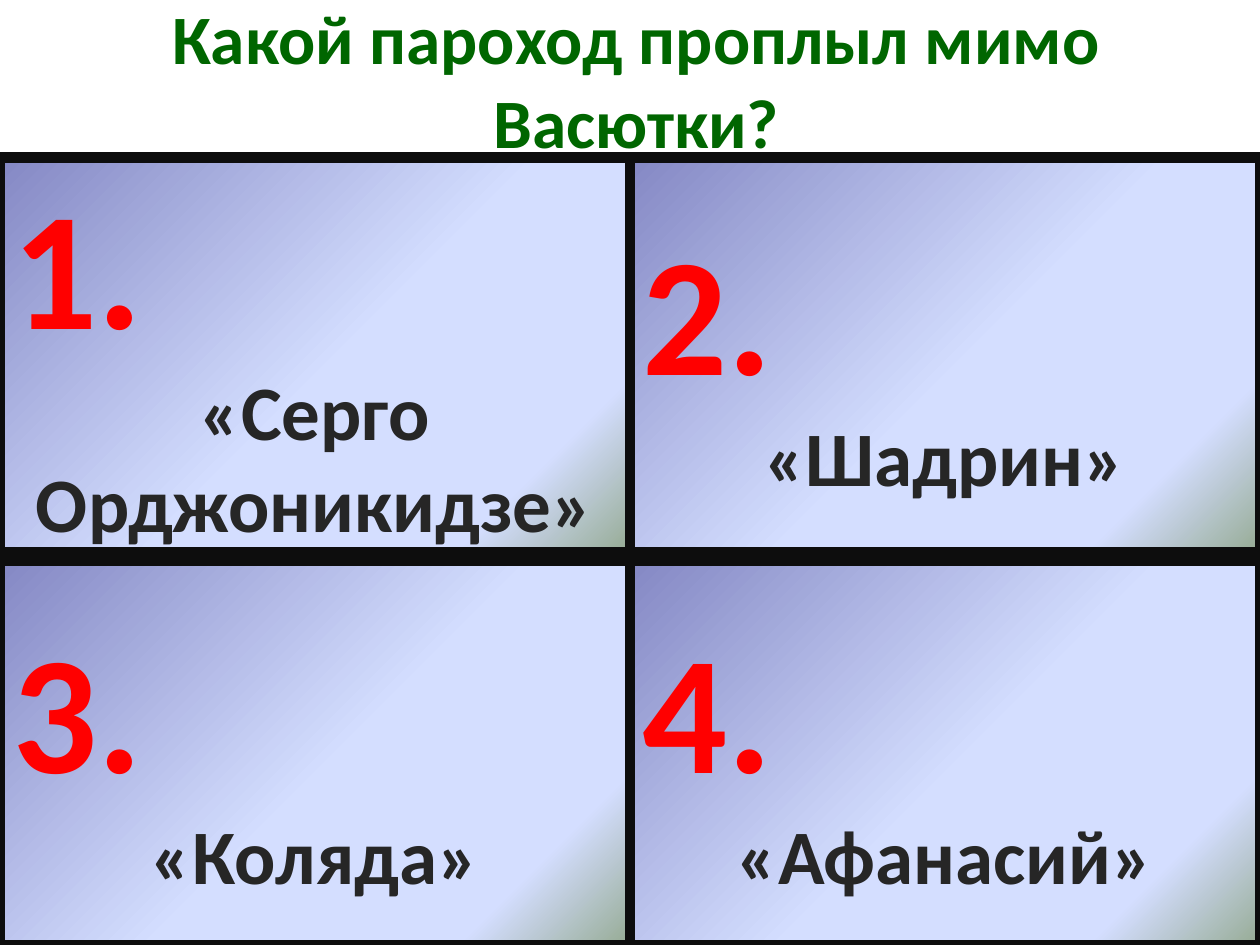
import copy

import pptx
import pptx.dml.color
import pptx.enum.shapes
import pptx.enum.text
import pptx.oxml.ns
import pptx.util
from pptx.util import Inches

RGBColor = pptx.dml.color.RGBColor
PP_ALIGN = pptx.enum.text.PP_ALIGN

GREEN = RGBColor(0x00, 0x66, 0x00)
RED = RGBColor(0xFF, 0x00, 0x00)
DARK_GREY = RGBColor(0x26, 0x26, 0x26)
BLACK = RGBColor(0x0D, 0x0D, 0x0D)
PALE_BLUE = RGBColor(0xD4, 0xDE, 0xFF)
GRADIENT = [
    (0, RGBColor(0x84, 0x88, 0xC4)),
    (0.53, PALE_BLUE),
    (0.83, PALE_BLUE),
    (1, RGBColor(0x96, 0xAB, 0x94)),
]

FONT = "Calibri"
QUESTION = "Какой пароход проплыл мимо Васютки?"
ANSWERS = ["«Серго Орджоникидзе»", "«Шадрин»", "«Коляда»", "«Афанасий»"]


def add_run(paragraph, text, size, color, alignment):
    paragraph.alignment = alignment
    run = paragraph.add_run()
    run.text = text
    run.font.name = FONT
    run.font.size = pptx.util.Pt(size)
    run.font.bold = True
    run.font.color.rgb = color


def prepare_frame(shape):
    frame = shape.text_frame
    frame.word_wrap = True
    frame.auto_size = pptx.enum.text.MSO_AUTO_SIZE.NONE
    frame.vertical_anchor = pptx.enum.text.MSO_ANCHOR.MIDDLE
    return frame


def place_title(slide, left, top, width, height):
    title = slide.shapes.title
    title.left, title.top, title.width, title.height = left, top, width, height
    frame = prepare_frame(title)
    add_run(frame.paragraphs[0], QUESTION, 39.6, GREEN, PP_ALIGN.CENTER)


def fill_with_gradient(shape):
    shape.fill.gradient()
    shape.fill.gradient_angle = 315  # counter-clockwise: top left to bottom right
    stop_list = shape.element.find(".//" + pptx.oxml.ns.qn("a:gsLst"))
    while len(stop_list) < len(GRADIENT):
        stop_list.append(copy.deepcopy(stop_list[0]))
    for stop, (position, color) in zip(shape.fill.gradient_stops, GRADIENT):
        stop.position = position
        stop.color.rgb = color


def add_answer(slide, number, answer, left, top, width, height):
    card = slide.shapes.add_shape(
        pptx.enum.shapes.MSO_SHAPE.RECTANGLE, left, top, width, height
    )
    card.shadow.inherit = False
    fill_with_gradient(card)
    card.line.color.rgb = BLACK
    card.line.width = pptx.util.Pt(6)
    frame = prepare_frame(card)
    add_run(frame.paragraphs[0], f"{number}.", 96, RED, PP_ALIGN.LEFT)
    add_run(frame.add_paragraph(), answer, 44, DARK_GREY, PP_ALIGN.CENTER)


def add_answer_grid(slide, left, top, width, row_heights, gap):
    """Place the answers in two columns, row by row."""
    column_width = width // 2
    for row, height in enumerate(row_heights):
        for column in range(2):
            index = row * 2 + column
            add_answer(slide, index + 1, ANSWERS[index],
                       left + column * column_width, top, column_width, height)
        top += height + gap


def main():
    presentation = pptx.Presentation()
    presentation.slide_width = Inches(10)
    presentation.slide_height = Inches(7.5)
    slide = presentation.slides.add_slide(presentation.slide_layouts[5])
    place_title(slide, Inches(0.55), Inches(0), Inches(9), Inches(1.25))
    add_answer_grid(slide, Inches(0), Inches(1.25), Inches(10),
                    [Inches(3.13), Inches(3.05)], Inches(0.07))
    presentation.save("out.pptx")


if __name__ == "__main__":
    main()
